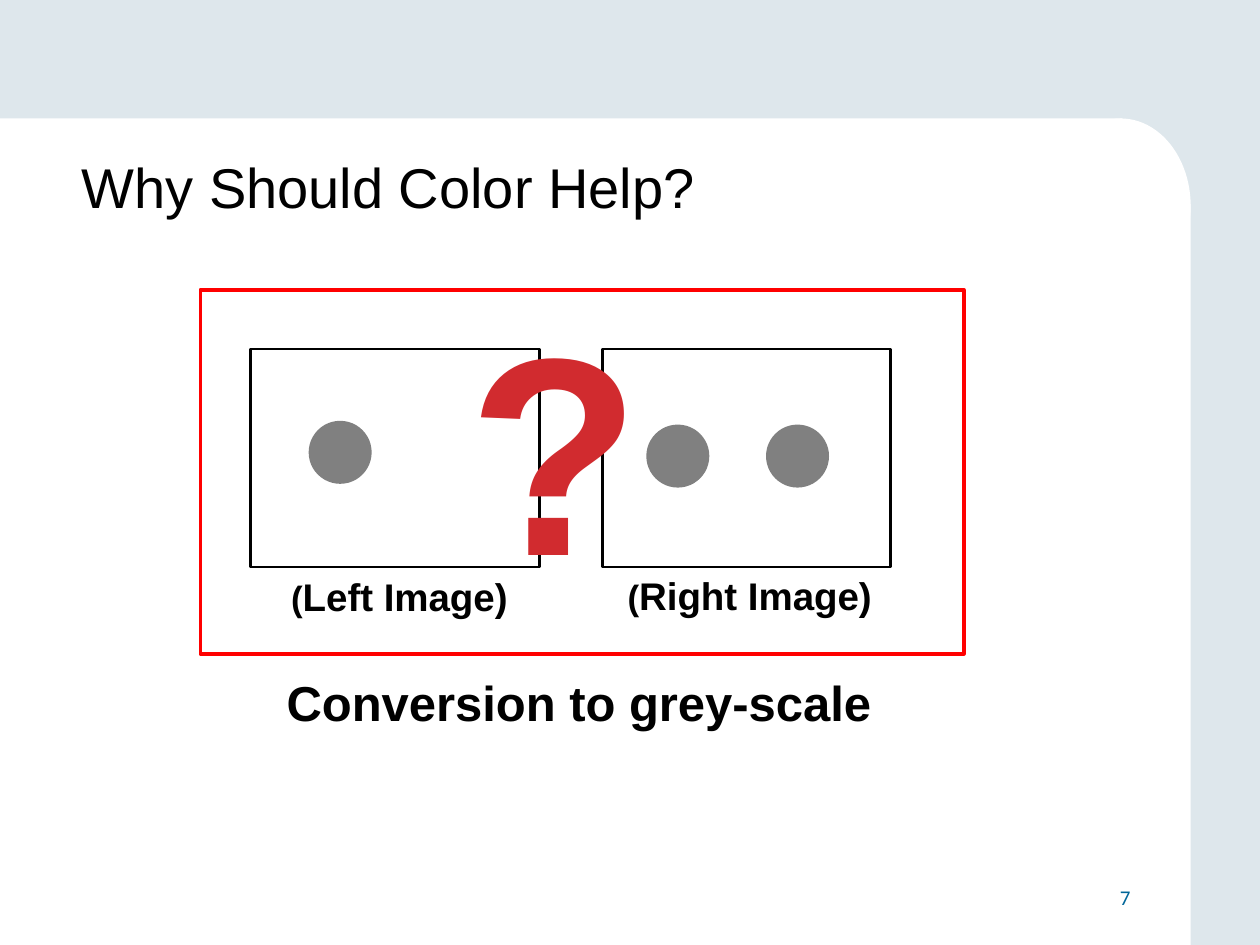
from pptx import Presentation
from pptx.dml.color import RGBColor
from pptx.enum.shapes import MSO_SHAPE
from pptx.enum.text import MSO_ANCHOR, PP_ALIGN
from pptx.util import Inches, Pt

RECT, OVAL = MSO_SHAPE.RECTANGLE, MSO_SHAPE.OVAL
TOP, MIDDLE = MSO_ANCHOR.TOP, MSO_ANCHOR.MIDDLE
LEFT, CENTER, RIGHT = PP_ALIGN.LEFT, PP_ALIGN.CENTER, PP_ALIGN.RIGHT
COLORS = {
    "backdrop": "DEE7EC", "panel": "FFFFFF", "ink": "000000", "frame": "FF0000",
    "dot": "808080", "question": "D12B2F", "number": "006699",
}
DOT_SIZE = 0.5


def rgb(name):
    """Return the named colour."""
    return RGBColor.from_string(COLORS[name])


def add_figure(slide, kind, box, fill=None, line=None, width=1.5):
    """Add a preset shape with an optional fill and outline."""
    figure = slide.shapes.add_shape(kind, *map(Inches, box))
    figure.shadow.inherit = False
    if fill:
        figure.fill.solid()
        figure.fill.fore_color.rgb = rgb(fill)
    else:
        figure.fill.background()
    if line:
        figure.line.color.rgb = rgb(line)
        figure.line.width = Pt(width)
    else:
        figure.line.fill.background()


def add_text(slide, box, runs, size, color="ink", font="Arial", bold=False,
             align=LEFT, anchor=TOP, spacing=None):
    """Add one paragraph made of (text, own size or None) runs."""
    frame = slide.shapes.add_textbox(*map(Inches, box)).text_frame
    frame.word_wrap = True
    frame.vertical_anchor = anchor
    paragraph = frame.paragraphs[0]
    paragraph.alignment = align
    if spacing:
        paragraph.line_spacing = spacing
    paragraph.font.name = font
    paragraph.font.size = Pt(size)
    paragraph.font.bold = bold
    paragraph.font.color.rgb = rgb(color)
    for text, own_size in runs:
        run = paragraph.add_run()
        run.text = text
        if own_size:
            run.font.size = Pt(own_size)


def add_backdrop(slide, left, top, width, height):
    """Place the white panel with its rounded top right corner."""
    slide.background.fill.solid()
    slide.background.fill.fore_color.rgb = rgb("backdrop")
    right, bottom = left + width, top + height
    add_figure(slide, RECT, (left, top, width - 0.54, height), "panel")
    add_figure(slide, OVAL, (right - 1.11, top, 1.11, 1.39), "panel")
    add_figure(slide, RECT, (right - 4.1, top + 0.68, 4.1, bottom - top - 0.68), "panel")


def add_view(slide, left, top, width, height, dots, label, label_box):
    """Place one camera view with its dots and the label below."""
    add_figure(slide, RECT, (left, top, width, height), line="ink")
    for dx, dy in dots:
        add_figure(slide, OVAL, (left + dx, top + dy, DOT_SIZE, DOT_SIZE), "dot")
    dx, dy, label_width = label_box
    add_text(slide, (left + dx, top + dy, label_width, 0.39),
             [("(", 20), (label, None)], 22, bold=True, align=CENTER, spacing=0.8)


def add_comparison(slide, left, top, width, height):
    """Place the framed pair of views, the caption and the question mark."""
    add_figure(slide, RECT, (left, top, width, height), "panel", "frame", 2)
    views = [
        (0.4, [(0.46, 0.57)], "Left Image)", (0.02, 1.8, 2.32)),
        (3.19, [(0.35, 0.6), (1.3, 0.6)], "Right Image)", (-0.12, 1.79, 2.58)),
    ]
    for dx, dots, label, label_box in views:
        add_view(slide, left + dx, top + 0.47, 2.29, 1.73, dots, label, label_box)
    add_text(slide, (left + 0.02, top + height + 0.19, 5.97, 0.39),
             [("Conversion to grey-scale", None)], 28, bold=True,
             align=CENTER, spacing=0.8)
    add_text(slide, (left + 2.03, top + 0.34, 1.61, 2.28), [("?", None)], 161,
             color="question", bold=True, spacing=0.8)


def main():
    """Build and save the slide."""
    deck = Presentation()
    deck.slide_width, deck.slide_height = Inches(10), Inches(7.5)
    slide = deck.slides.add_slide(deck.slide_layouts[6])
    add_backdrop(slide, 0, 0.94, 9.45, 6.56)
    add_text(slide, (0.55, 1.11, 8.77, 0.73), [("Why Should Color Help?", None)],
             32, anchor=MIDDLE)
    add_text(slide, (7.17, 6.92, 1.9, 0.4), [("7", None)], 12, color="number",
             font="Calibri", align=RIGHT, anchor=MIDDLE)
    add_comparison(slide, 1.59, 2.3, 6.06, 2.89)
    deck.save("out.pptx")


if __name__ == "__main__":
    main()
